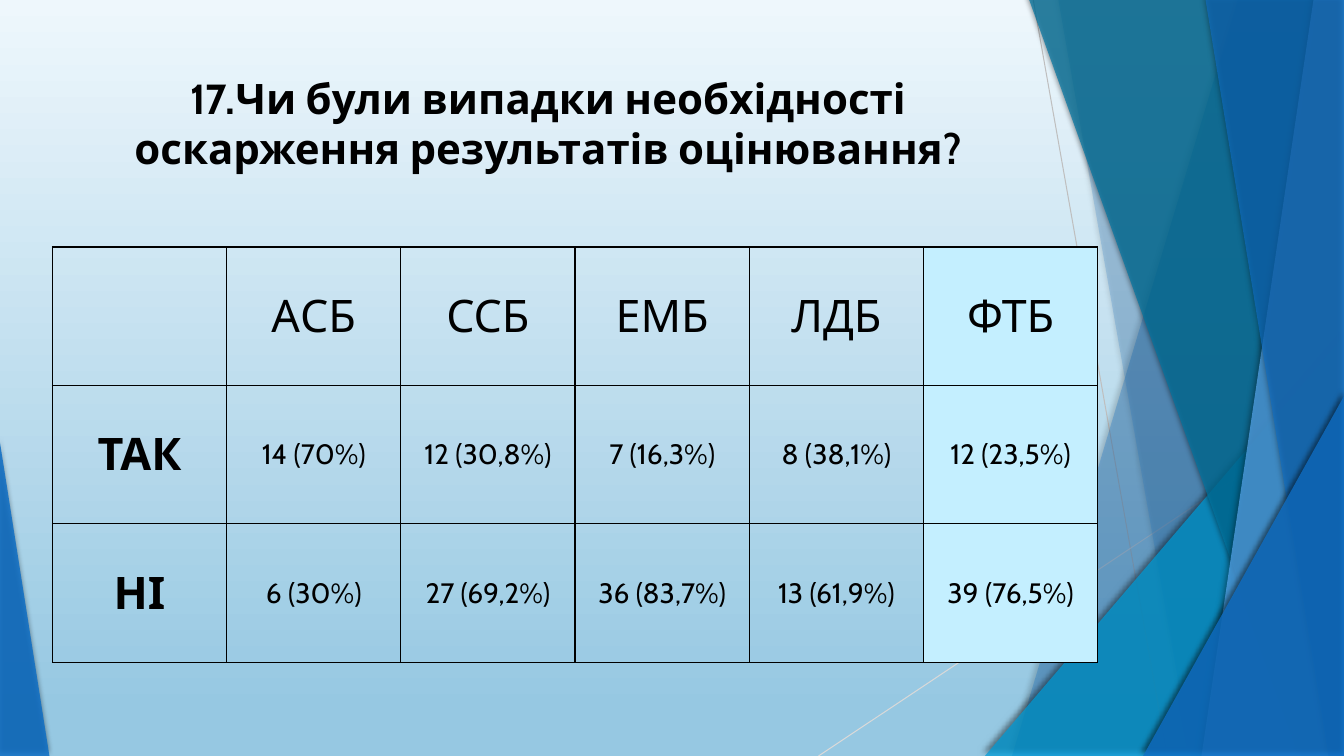
from dataclasses import dataclass

from lxml.etree import SubElement
from pptx import Presentation
from pptx.dml.color import RGBColor
from pptx.enum.shapes import MSO_CONNECTOR, MSO_SHAPE
from pptx.enum.text import MSO_ANCHOR, MSO_AUTO_SIZE, PP_ALIGN
from pptx.oxml.ns import qn
from pptx.util import Inches, Pt

COLORS = {
    "black": "000000", "blue": "0F6FC6", "cyan": "009DD9", "teal": "0076A3",
    "sky": "59AAF2", "highlight": "C4EFFF", "ray": "BFBFBF", "pale_ray": "D9D9D9",
    "ground": "96C8E2", "horizon": "EEF7FC",
}
FONT = "Cabin"
WIDTH, HEIGHT = Inches(13.333), Inches(7.5)
TITLE = "17.Чи були випадки необхідності оскарження результатів оцінювання?"
ANSWERS = [
    ["", "АСБ", "ССБ", "ЕМБ", "ЛДБ", "ФТБ"],
    ["ТАК", "14 (70%)", "12 (30,8%)", "7 (16,3%)", "8 (38,1%)", "12 (23,5%)"],
    ["НІ", "6 (30%)", "27 (69,2%)", "36 (83,7%)", "13 (61,9%)", "39 (76,5%)"],
]


# All positions are percentages of the slide's width and height.
@dataclass
class Ray:
    start: tuple[float, float]
    end: tuple[float, float]
    color: str


@dataclass
class Ribbon:
    """A full-height band from a slanted left edge to the slide's right edge."""
    top: float
    bottom: float
    color: str
    opacity: int


@dataclass
class Corner:
    """A right triangle standing on the slide's bottom edge."""
    left: float
    top: float
    width: float
    apex: int
    color: str
    opacity: int


RAYS = [
    Ray((76.88, 0), (86.85, 100), "ray"),
    Ray((100, 53.73), (60.9, 100), "pale_ray"),
]
FACETS = [
    Ribbon(92.1, 75.3, "blue", 30),
    Ribbon(78.75, 88.65, "blue", 20),
    Corner(73.28, 44.4, 26.72, 1, "cyan", 72),
    Ribbon(76.58, 96.83, "teal", 70),
    Ribbon(97.73, 89.4, "sky", 70),
    Ribbon(89.7, 98.85, "blue", 65),
    Corner(85.05, 52.4, 14.95, 1, "blue", 80),
    Corner(0, 58.53, 3.68, 0, "blue", 85),
]


def across(share: float) -> int:
    return round(WIDTH * share / 100)


def down(share: float) -> int:
    return round(HEIGHT * share / 100)


def rgb(name: str) -> RGBColor:
    return RGBColor.from_string(COLORS[name])


def format_text(frame, size: int, bold: bool) -> None:
    for paragraph in frame.paragraphs:
        paragraph.alignment = PP_ALIGN.CENTER
        for run in paragraph.runs:
            font = run.font
            font.name, font.size, font.bold = FONT, Pt(size), bold
            font.color.rgb = rgb("black")


def paint_background(slide) -> None:
    fill = slide.background.fill
    fill.gradient()
    fill.gradient_angle = 90
    for stop, name, position in zip(fill.gradient_stops, ("ground", "horizon"), (0.06, 1)):
        stop.color.rgb = rgb(name)
        stop.position = position


def draw_ray(slide, ray: Ray) -> None:
    (x1, y1), (x2, y2) = ray.start, ray.end
    line = slide.shapes.add_connector(
        MSO_CONNECTOR.STRAIGHT, across(x1), down(y1), across(x2), down(y2))
    line.line.color.rgb = rgb(ray.color)
    line.line.width = Pt(0.75)
    SubElement(line.element.spPr, qn("a:effectLst"))


def draw_facet(slide, facet: Ribbon | Corner) -> None:
    if isinstance(facet, Ribbon):
        builder = slide.shapes.build_freeform(across(facet.top), 0)
        builder.add_line_segments(
            [(WIDTH, 0), (WIDTH, HEIGHT), (across(facet.bottom), HEIGHT)], close=True)
        shape = builder.convert_to_shape()
    else:
        shape = slide.shapes.add_shape(
            MSO_SHAPE.ISOSCELES_TRIANGLE, across(facet.left), down(facet.top),
            across(facet.width), down(100 - facet.top))
        shape.adjustments[0] = facet.apex
    shape.fill.solid()
    shape.fill.fore_color.rgb = rgb(facet.color)
    shape.line.fill.background()
    properties = shape.element.spPr
    color = properties.find(qn("a:solidFill")).find(qn("a:srgbClr"))
    SubElement(color, qn("a:alpha"), val=str(facet.opacity * 1000))
    add_shadow(shape)


def add_shadow(shape) -> None:
    shape.shadow.inherit = False
    effects = shape.element.spPr.find(qn("a:effectLst"))
    shadow = SubElement(effects, qn("a:outerShdw"), blurRad=str(Pt(4)), dist=str(Pt(3)),
                        dir=str(245 * 60000), algn="tl", rotWithShape="0")
    color = SubElement(shadow, qn("a:srgbClr"), val=COLORS["black"])
    SubElement(color, qn("a:alpha"), val="60000")


def place_title(slide) -> None:
    title = slide.shapes.title
    title.left, title.top = across(5.55), down(8.93)
    title.width, title.height = across(70.5), down(19.2)
    frame = title.text_frame
    frame.text = TITLE
    frame.word_wrap = True
    frame.auto_size = MSO_AUTO_SIZE.NONE
    frame.vertical_anchor = MSO_ANCHOR.TOP
    format_text(frame, 30, True)
    title.element.getparent().append(title.element)


def add_borders(cell) -> None:
    properties = cell._tc.get_or_add_tcPr()
    for side in ("lnL", "lnR", "lnT", "lnB"):
        line = SubElement(properties, qn(f"a:{side}"), w=str(Pt(0.96)))
        fill = SubElement(line, qn("a:solidFill"))
        SubElement(fill, qn("a:srgbClr"), val=COLORS["black"])


def add_answers(slide) -> None:
    rows, columns = len(ANSWERS), len(ANSWERS[0])
    table = slide.shapes.add_table(
        rows, columns, across(3.9), down(32.67), across(77.78), down(54.93)).table
    table.first_row = table.horz_banding = False
    for row, texts in enumerate(ANSWERS):
        for column, text in enumerate(texts):
            cell = table.cell(row, column)
            cell.text = text
            cell.vertical_anchor = MSO_ANCHOR.MIDDLE
            is_heading = row == 0 or column == 0
            format_text(cell.text_frame, 32 if is_heading else 20, column == 0)
            add_borders(cell)
            if column == columns - 1:
                cell.fill.solid()
                cell.fill.fore_color.rgb = rgb("highlight")
            else:
                cell.fill.background()


def main() -> None:
    presentation = Presentation()
    presentation.slide_width, presentation.slide_height = WIDTH, HEIGHT
    slide = presentation.slides.add_slide(presentation.slide_layouts[5])
    paint_background(slide)
    for ray in RAYS:
        draw_ray(slide, ray)
    for facet in FACETS:
        draw_facet(slide, facet)
    place_title(slide)
    add_answers(slide)
    presentation.save("out.pptx")


if __name__ == "__main__":
    main()
